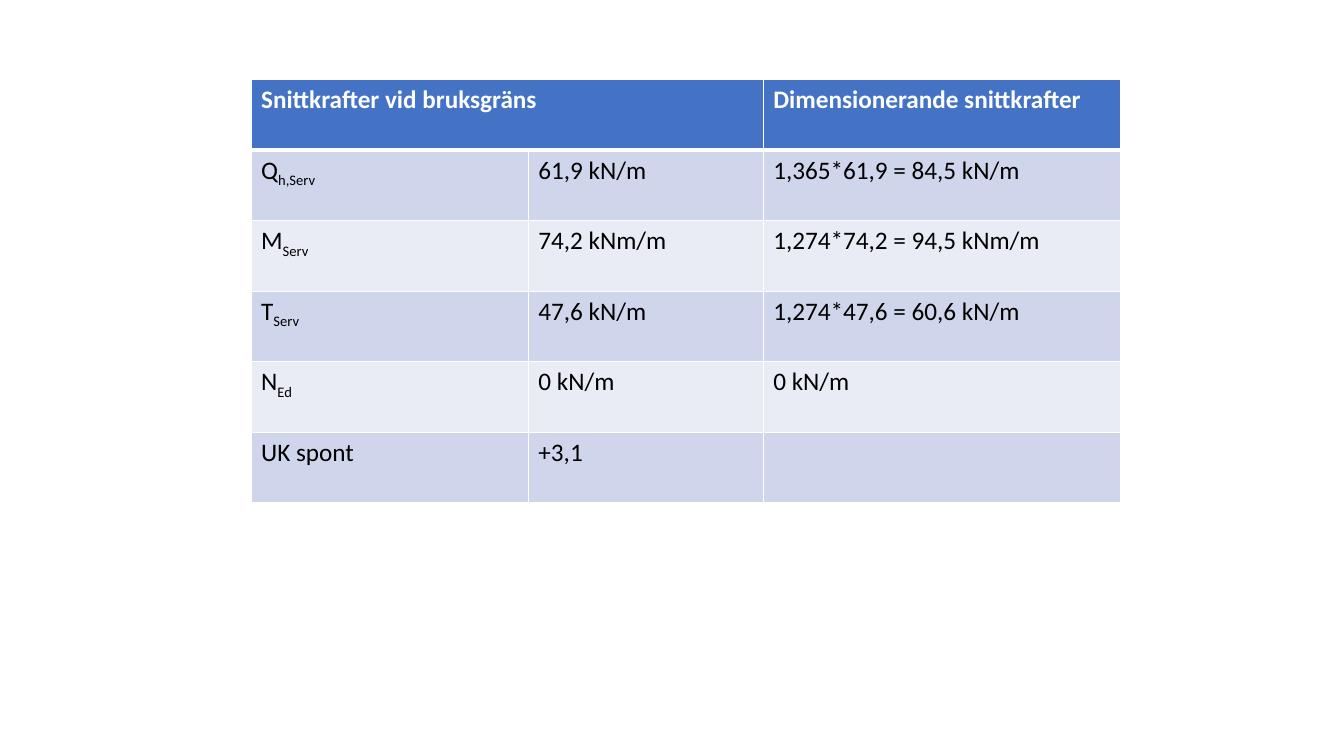
from dataclasses import dataclass

from lxml.etree import SubElement as Sub
from pptx import Presentation
from pptx.dml.color import RGBColor as Rgb
from pptx.oxml.ns import qn
from pptx.table import Table, _Cell as Cell
from pptx.util import Inches, Pt


@dataclass(frozen=True)
class Theme:
    font: str = "Calibri"
    size: int = 18
    head: str = "4472C4"
    bands: tuple[str, str] = ("CFD5EA", "E9EBF5")
    light: str = "FFFFFF"
    dark: str = "000000"
    thin: float = 1
    thick: float = 3


@dataclass(frozen=True)
class Force:
    name: str
    sub: str
    value: str
    design: str


THEME = Theme()
LEFT, TOP, ROW = 2.49, 0.79, 0.7
COLS = (2.75, 2.33, 3.54)
HEADS = ("Snittkrafter vid bruksgräns", "", "Dimensionerande snittkrafter")
FORCES = (
    Force("Q", "h,Serv", "61,9 kN/m", "1,365*61,9 = 84,5 kN/m"),
    Force("M", "Serv", "74,2 kNm/m", "1,274*74,2 = 94,5 kNm/m"),
    Force("T", "Serv", "47,6 kN/m", "1,274*47,6 = 60,6 kN/m"),
    Force("N", "Ed", "0 kN/m", "0 kN/m"),
    Force("UK spont", "", "+3,1", ""),
)


def edge(cell: Cell, top: float, base: float) -> None:
    """Draw the four borders of a cell."""
    props = cell._tc.get_or_add_tcPr()
    for side, width in zip("LRTB", (THEME.thin, THEME.thin, top, base)):
        line = Sub(props, qn(f"a:ln{side}"), w=str(Pt(width)))
        fill = Sub(line, qn("a:solidFill"))
        Sub(fill, qn("a:srgbClr"), val=THEME.light)


def write(cell: Cell, text: str, sub: str, head: bool) -> None:
    """Write a cell's text with an optional subscript."""
    para = cell.text_frame.paragraphs[0]
    font = para.font
    font.name, font.size, font.bold = THEME.font, Pt(THEME.size), head
    font.color.rgb = Rgb.from_string(THEME.light if head else THEME.dark)
    if text:
        para.add_run().text = text
    if sub:
        run = para.add_run()
        run.text = sub
        run._r.get_or_add_rPr().set("baseline", "-25000")


def fill_row(table: Table, row: int, texts: tuple[str, ...], sub: str = "") -> None:
    """Fill and style one table row."""
    head = row == 0
    shade = THEME.head if head else THEME.bands[(row - 1) % 2]
    top = THEME.thick if row == 1 else THEME.thin
    base = THEME.thick if head else THEME.thin
    for col, text in enumerate(texts):
        cell = table.cell(row, col)
        edge(cell, top, base)
        cell.fill.solid()
        cell.fill.fore_color.rgb = Rgb.from_string(shade)
        write(cell, text, sub if col == 0 else "", head)


def main() -> None:
    """Build the slide with the table of section forces."""
    deck = Presentation()
    deck.slide_width, deck.slide_height = Inches(13.33), Inches(7.5)
    slide = deck.slides.add_slide(deck.slide_layouts[6])
    count = len(FORCES) + 1
    frame = slide.shapes.add_table(
        count, len(COLS), Inches(LEFT), Inches(TOP),
        Inches(sum(COLS)), Inches(ROW * count),
    )
    table = frame.table
    for col, width in zip(table.columns, COLS):
        col.width = Inches(width)
    for row in table.rows:
        row.height = Inches(ROW)
    fill_row(table, 0, HEADS)
    for row, force in enumerate(FORCES, 1):
        fill_row(table, row, (force.name, force.value, force.design), force.sub)
    table.cell(0, 0).merge(table.cell(0, 1))
    deck.save("out.pptx")


if __name__ == "__main__":
    main()
